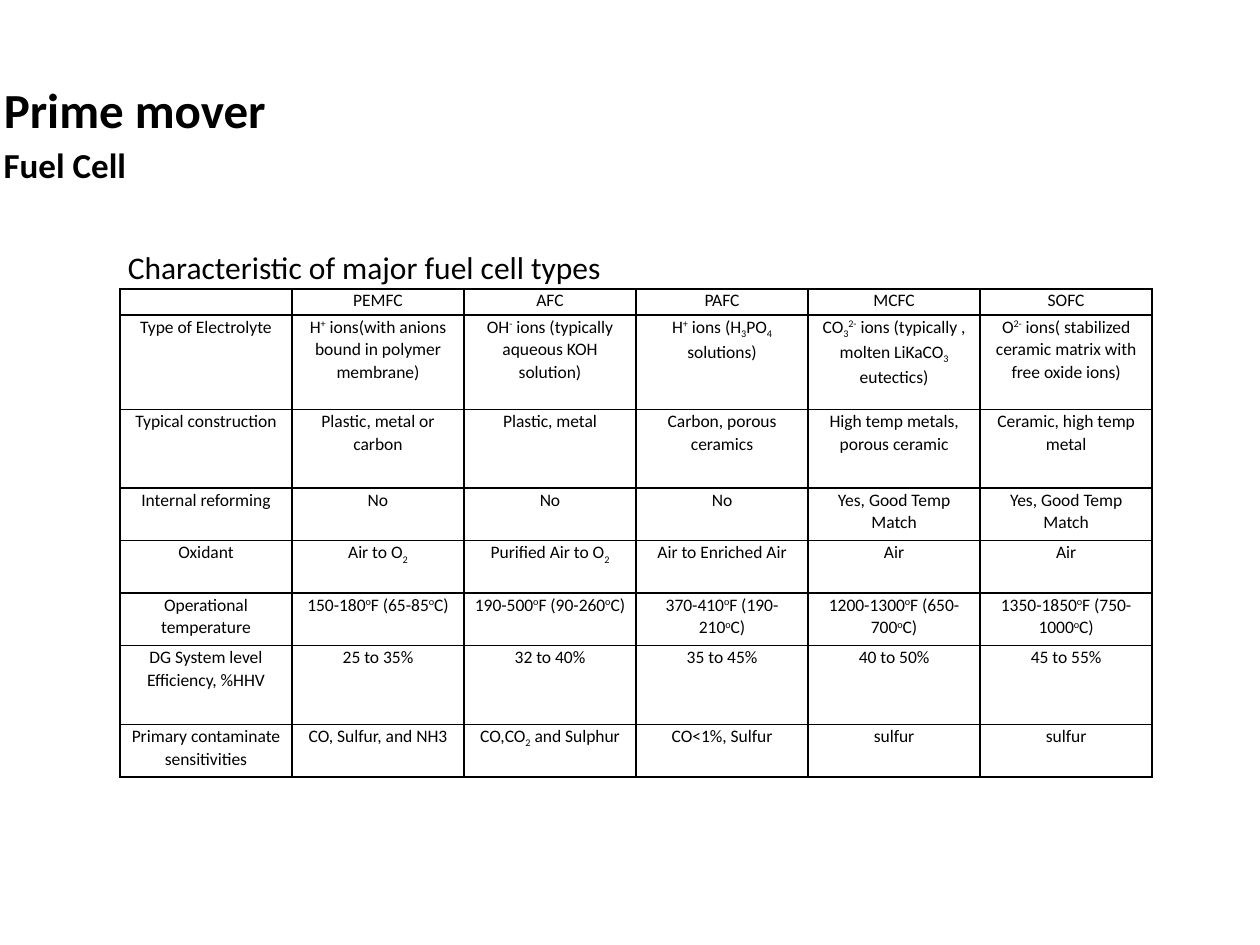
from lxml.etree import SubElement
from pptx import Presentation
from pptx.dml.color import RGBColor
from pptx.enum.text import MSO_ANCHOR as Anchor, MSO_AUTO_SIZE as AutoSize, PP_ALIGN as Align
from pptx.oxml.ns import qn
from pptx.util import Pt

FONT = "Calibri"
BLACK = "000000"
BASELINES = {"^": "30000", "_": "-25000"}
ROW_HEIGHTS = [15, 54, 45, 30, 30, 30, 45, 30]
CELL_TEXTS = [
    ["", "PEMFC", "AFC", "PAFC", "MCFC", "SOFC"],
    ["Type of Electrolyte",
     "H|^+| ions(with anions bound in polymer membrane)",
     "OH|^-| ions (typically aqueous KOH solution)",
     "H|^+| ions (H|_3|PO|_4| solutions)",
     "CO|_3|^2-| ions (typically , molten LiKaCO|_3| eutectics)",
     "O|^2-| ions( stabilized ceramic matrix with free oxide ions)"],
    ["Typical construction", "Plastic, metal or carbon", "Plastic, metal",
     "Carbon, porous ceramics", "High temp metals, porous ceramic",
     "Ceramic, high temp metal"],
    ["Internal reforming", "No", "No", "No",
     "Yes, Good Temp Match", "Yes, Good Temp Match"],
    ["Oxidant", "Air to O|_2", "Purified Air to O|_2",
     "Air to Enriched Air", "Air", "Air"],
    ["Operational temperature",
     "150-180|^o|F (65-85|^o|C)",
     "190-500|^o|F (90-260|^o|C)",
     "370-410|^o|F (190-210|^o|C)",
     "1200-1300|^o|F (650-700|^o|C)",
     "1350-1850|^o|F (750-1000|^o|C)"],
    ["DG System level Efficiency, %HHV", "25 to 35%", "32 to 40%",
     "35 to 45%", "40 to 50%", "45 to 55%"],
    ["Primary contaminate sensitivities", "CO, Sulfur, and NH3",
     "CO,CO|_2| and Sulphur", "CO<1%, Sulfur", "sulfur", "sulfur"],
]


def color(value):
    """Turn a hex string into a colour."""
    return RGBColor.from_string(value)


def format_font(font, size, bold=False):
    """Give a font the slide's face and colour."""
    font.name = FONT
    font.size = Pt(size)
    font.bold = bold
    font.color.rgb = color(BLACK)


def fill_heading(shape, box, text, size, bold=True, anchor=Anchor.MIDDLE):
    """Place a shape in its box and write one left-aligned line in it."""
    shape.left, shape.top, shape.width, shape.height = (Pt(value) for value in box)
    frame = shape.text_frame
    frame.text = text
    frame.word_wrap = True
    frame.auto_size = AutoSize.SHAPE_TO_FIT_TEXT
    frame.vertical_anchor = anchor
    paragraph = frame.paragraphs[0]
    paragraph.alignment = Align.LEFT
    format_font(paragraph.runs[0].font, size, bold)


def add_heading(slide, box, text, size, **options):
    """Add a text box holding one heading line."""
    shape = slide.shapes.add_textbox(0, 0, 0, 0)
    fill_heading(shape, box, text, size, **options)


def write_cell(cell, text, size=10):
    """Write centred text whose marked parts are raised or lowered."""
    cell.margin_left = cell.margin_right = Pt(5)
    cell.margin_top = cell.margin_bottom = 0
    paragraph = cell.text_frame.paragraphs[0]
    paragraph.alignment = Align.CENTER
    paragraph.line_spacing = 1.07
    if not text:
        SubElement(paragraph._p, qn("a:endParaRPr"), sz=str(size * 100))
        return
    for part in text.split("|"):
        run = paragraph.add_run()
        run.text = part.lstrip("^_")
        format_font(run.font, size)
        if part[0] in BASELINES:
            run.font._element.set("baseline", BASELINES[part[0]])


def style_cell(cell):
    """Give a cell thin black borders and no fill."""
    properties = cell._tc.get_or_add_tcPr()
    for side in ("lnL", "lnR", "lnT", "lnB"):
        line = SubElement(properties, qn(f"a:{side}"), w=str(Pt(1)))
        solid = SubElement(line, qn("a:solidFill"))
        SubElement(solid, qn("a:srgbClr"), val=BLACK)
    cell.fill.background()


def add_fuel_cell_table(slide, left, top, width):
    """Add the table that compares the fuel cell types."""
    column_count = len(CELL_TEXTS[0])
    table = slide.shapes.add_table(
        len(CELL_TEXTS), column_count, Pt(left), Pt(top),
        Pt(width), Pt(sum(ROW_HEIGHTS))).table
    table.first_row = table.horz_banding = False
    for column in table.columns:
        column.width = Pt(width / column_count)
    for row, height, texts in zip(table.rows, ROW_HEIGHTS, CELL_TEXTS):
        row.height = Pt(height)
        for cell, text in zip(row.cells, texts):
            write_cell(cell, text)
            style_cell(cell)


def main():
    """Build the fuel cell slide and save it."""
    presentation = Presentation()
    presentation.slide_width, presentation.slide_height = Pt(720), Pt(540)
    slide = presentation.slides.add_slide(presentation.slide_layouts[5])
    fill_heading(slide.shapes.title, (-5, 42, 738, 41), "Prime mover", 28)
    add_heading(slide, (-5, 78, 738, 32), "Fuel Cell", 20)
    add_fuel_cell_table(slide, 68.5, 165, 590)
    add_heading(slide, (66, 138, 360, 29), "Characteristic of major fuel cell types",
                18, bold=False, anchor=Anchor.TOP)
    presentation.save("out.pptx")


if __name__ == "__main__":
    main()
